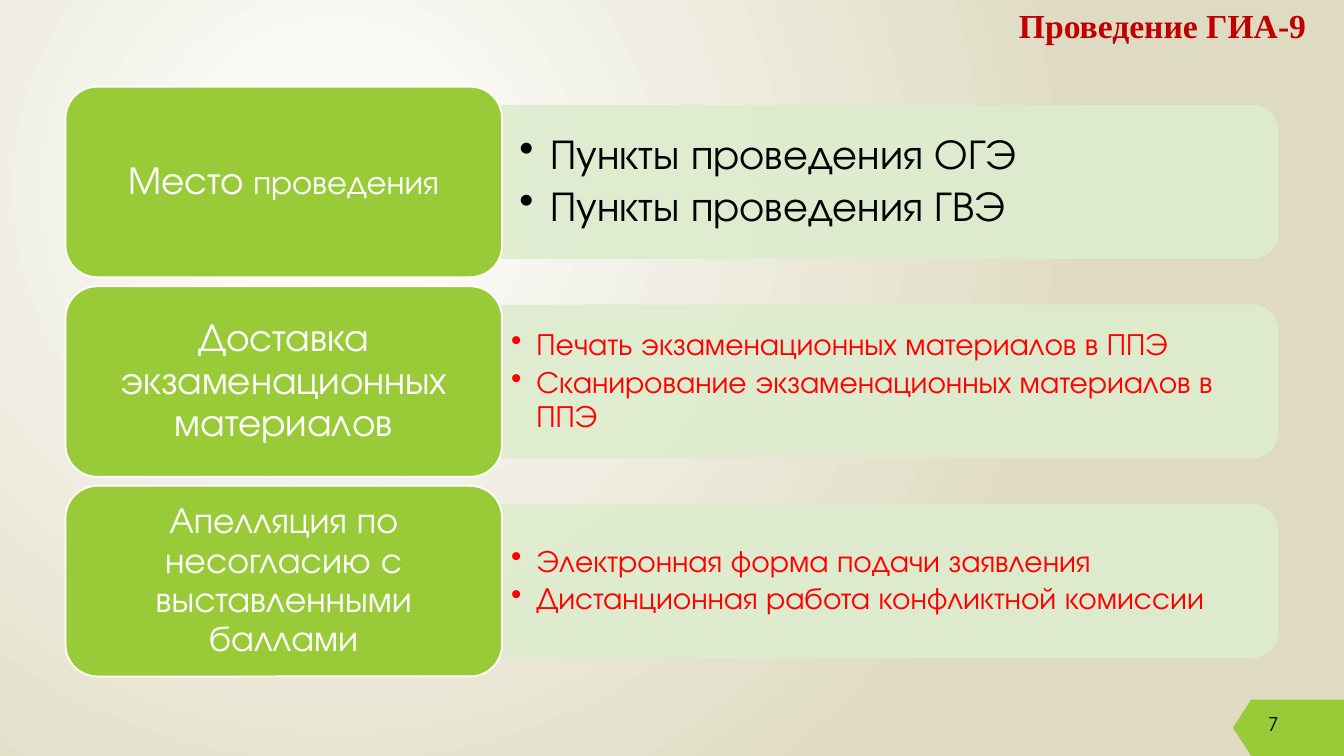
from lxml import etree
from pptx import Presentation
from pptx.dml.color import RGBColor
from pptx.enum import shapes, text
from pptx.oxml import ns
from pptx.util import Inches, Pt

COLORS = {"green": "99CB38", "pale": "DEECCE", "white": "FFFFFF", "black": "000000",
          "red": "FF0000", "title": "C00000", "sand": "DFDBC2"}
BODY_FONT = "TeX Gyre Adventor"
TITLE_FONT = "Times New Roman"

LABEL_LEFT, LABEL_TOP, LABEL_W, LABEL_H = 0.65, 0.86, 4.33, 1.89
ROW_PITCH = 1.98
BAND_W, BAND_H = 7.69, 1.51
BAND_TEXT_W, BAND_TEXT_H = 7.62, 1.36

ROWS = [
    {"label": [("Место", 28), (" проведения", 24)], "label_inset": 0.12,
     "items": ["Пункты проведения ОГЭ", "Пункты проведения ГВЭ"],
     "size": 30, "color": "black", "indent": 0.31, "inset": 0.17},
    {"label": [("Доставка экзаменационных материалов", 28)], "label_inset": 0.12,
     "items": ["Печать экзаменационных материалов в ППЭ",
               "Сканирование экзаменационных материалов в ППЭ"],
     "size": 22, "color": "red", "indent": 0.25, "inset": 0.09},
    {"label": [("Апелляция по несогласию с выставленными баллами", 26)], "label_inset": 0.11,
     "items": ["Электронная форма подачи заявления",
               "Дистанционная работа конфликтной комиссии"],
     "size": 22, "color": "red", "indent": 0.25, "inset": 0.09},
]


def rgb(name):
    return RGBColor.from_string(COLORS[name])


def write(sp, paragraphs, color="black", font=BODY_FONT, bold=False, align=text.PP_ALIGN.LEFT,
          anchor=text.MSO_ANCHOR.TOP, inset=(0.1, 0.05), spacing=1.0, after=0, bullet_indent=None):
    tf = sp.text_frame
    tf.word_wrap = True
    tf.auto_size = text.MSO_AUTO_SIZE.NONE
    tf.vertical_anchor = anchor
    tf.margin_left = tf.margin_right = Inches(inset[0])
    tf.margin_top = tf.margin_bottom = Inches(inset[1])
    for i, runs in enumerate(paragraphs):
        p = tf.add_paragraph() if i else tf.paragraphs[0]
        p.alignment = align
        p.line_spacing = spacing
        p.space_before = Pt(0)
        p.space_after = Pt(after)
        if bullet_indent:
            pPr = p._p.get_or_add_pPr()
            pPr.set("marL", str(Inches(bullet_indent)))
            pPr.set("indent", str(-Inches(bullet_indent)))
            etree.SubElement(pPr, ns.qn("a:buChar"), char="•")
        for content, size in runs:
            r = p.add_run()
            r.text = content
            r.font.name = font
            r.font.size = Pt(size)
            r.font.bold = bold
            r.font.color.rgb = rgb(color)


def paint(sp, fill, line=None, alpha=None):
    sp.shadow.inherit = False
    sp.fill.solid()
    sp.fill.fore_color.rgb = rgb(fill)
    if line:
        sp.line.color.rgb = rgb(line)
        sp.line.width = Pt(1.25)
    else:
        sp.line.fill.background()
    if alpha:
        for clr in sp._element.spPr.iter(ns.qn("a:srgbClr")):
            etree.SubElement(clr, ns.qn("a:alpha"), val=str(alpha * 1000))


def add_background(s):
    fill = s.background.fill
    fill.gradient()
    for stop, name in zip(fill.gradient_stops, ("white", "sand")):
        stop.color.rgb = rgb(name)
    grad = next(s.element.iter(ns.qn("a:gradFill")))
    grad.remove(grad.find(ns.qn("a:lin")))
    circle = etree.SubElement(grad, ns.qn("a:path"), path="circle")
    etree.SubElement(circle, ns.qn("a:fillToRect"), l="50000", t="50000", r="100000", b="100000")


def add_title(s):
    title = s.shapes.title
    title.left, title.top = Inches(9.72), Inches(0)
    title.width, title.height = Inches(3.62), Inches(0.66)
    write(title, [[("Проведение ГИА-9", 24)]], color="title", font=TITLE_FONT, bold=True,
          align=text.PP_ALIGN.CENTER)


def add_page_number(s):
    corners = [(12.23, 7.22), (12.41, 6.94), (13.33, 6.94), (13.33, 7.5), (12.41, 7.5)]
    points = [(Inches(x), Inches(y)) for x, y in corners]
    builder = s.shapes.build_freeform(*points[0])
    builder.add_line_segments(points[1:], close=True)
    paint(builder.convert_to_shape(), "green")
    number = s.shapes.add_textbox(Inches(12.48), Inches(7.02), Inches(0.85), Inches(0.4))
    write(number, [[("7", 13.5)]])


def add_band(s, left, middle, row):
    band = s.shapes.add_shape(
        shapes.MSO_SHAPE.ROUND_2_SAME_RECTANGLE,
        Inches(left + (BAND_W - BAND_H) / 2), Inches(middle - BAND_W / 2),
        Inches(BAND_H), Inches(BAND_W))
    band.rotation = 90
    paint(band, "pale", line="pale", alpha=90)
    box = s.shapes.add_textbox(Inches(left), Inches(middle - BAND_TEXT_H / 2),
                               Inches(BAND_TEXT_W), Inches(BAND_TEXT_H))
    write(box, [[(item, row["size"])] for item in row["items"]], color=row["color"],
          anchor=text.MSO_ANCHOR.MIDDLE, inset=(row["inset"], row["inset"] / 2),
          spacing=0.9, after=round(row["size"] * 0.15, 1), bullet_indent=row["indent"])


def add_label(s, top, row):
    label = s.shapes.add_shape(shapes.MSO_SHAPE.ROUNDED_RECTANGLE, Inches(LABEL_LEFT),
                               Inches(top), Inches(LABEL_W), Inches(LABEL_H))
    paint(label, "green", line="white")
    write(label, [row["label"]], color="white", align=text.PP_ALIGN.CENTER,
          anchor=text.MSO_ANCHOR.MIDDLE, inset=(row["label_inset"], row["label_inset"] / 2),
          spacing=0.9)


def main():
    prs = Presentation()
    prs.slide_width, prs.slide_height = Inches(13.33), Inches(7.5)
    s = prs.slides.add_slide(prs.slide_layouts[5])
    add_background(s)
    add_page_number(s)
    add_title(s)
    for i, row in enumerate(ROWS):
        top = LABEL_TOP + i * ROW_PITCH
        add_band(s, LABEL_LEFT + LABEL_W, top + LABEL_H / 2, row)
        add_label(s, top, row)
    prs.save("out.pptx")


if __name__ == "__main__":
    main()
